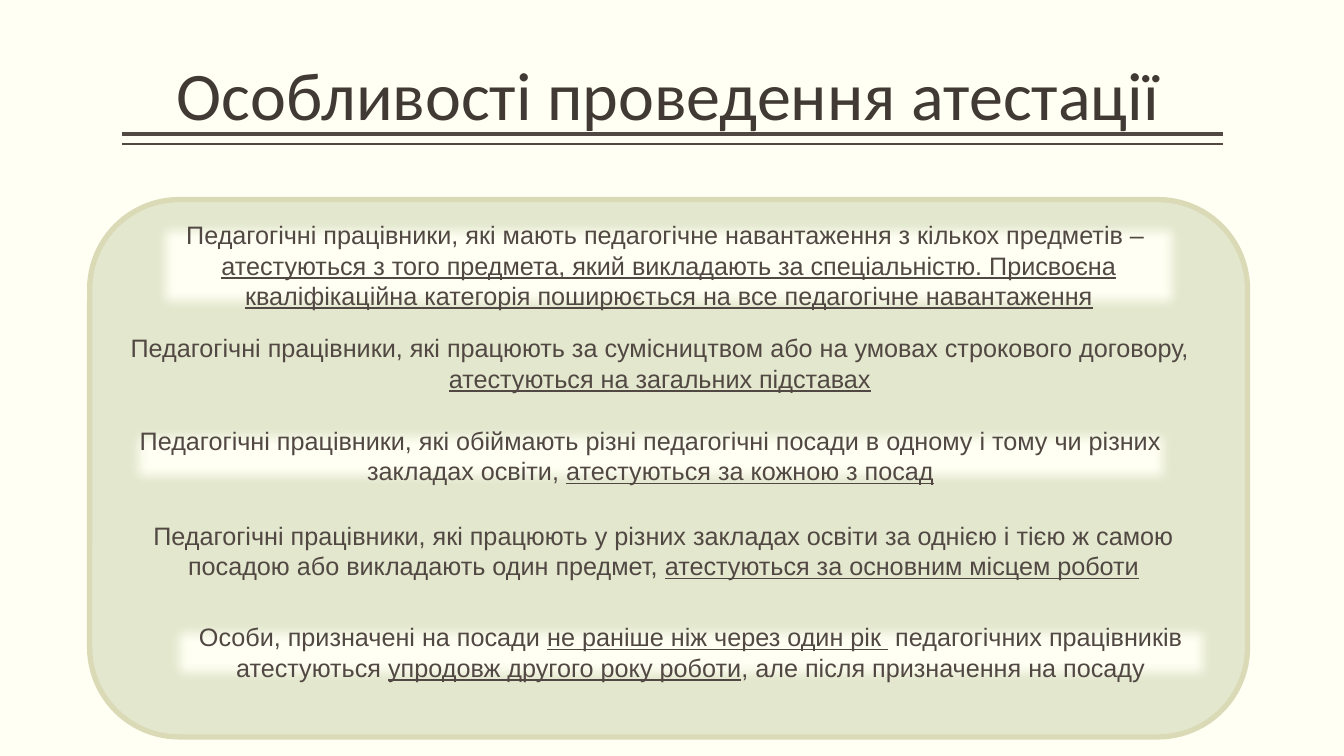
from lxml import etree
from pptx import Presentation
from pptx.dml.color import RGBColor
from pptx.enum import shapes, text
from pptx.oxml.ns import qn
from pptx.util import Cm, Pt

HUES = {"page": "FFFFF3", "title": "413933", "body": "514843",
        "panel": "E3E7CD", "edge": "DADAB6"}
TITLE = "Особливості проведення атестації"

# Each rule: box in cm, highlighted or not, paragraphs.
# Within a paragraph, every second piece is underlined.
RULES = [
    ((3.78, 5.41, 26.16, 2.57), True, [
        ["Педагогічні працівники, які мають педагогічне навантаження "
         "з кількох предметів – "],
        ["", "атестуються з того предмета, який викладають за спеціальністю. "
         "Присвоєна кваліфікаційна категорія поширюється на все педагогічне "
         "навантаження"]]),
    ((2.9, 8.26, 27.46, 1.8), False, [
        ["Педагогічні працівники, які працюють за сумісництвом або на умовах "
         "строкового договору, ", "атестуються на загальних підставах"]]),
    ((3.1, 10.59, 26.59, 1.8), True, [
        ["Педагогічні працівники, які обіймають різні педагогічні посади "
         "в одному і тому чи різних закладах освіти, ",
         "атестуються за кожною з посад"]]),
    ((3.1, 12.98, 27.25, 1.8), False, [
        ["Педагогічні працівники, які працюють у різних закладах освіти "
         "за однією і тією ж самою посадою або викладають один предмет, ",
         "атестуються за основним місцем роботи"]]),
    ((4.11, 15.54, 26.59, 1.8), True, [
        ["Особи, призначені на посади ", "не раніше ніж через один рік ",
         " педагогічних працівників атестуються ",
         "упродовж другого року роботи",
         ", але після призначення на посаду"]]),
]


def tint(name):
    return RGBColor.from_string(HUES[name])


def assign(item, form):
    for key, value in form.items():
        setattr(item, key, value)


def write(frame, paras, font, hue, form, space=1.0):
    """Fill a text frame with centred paragraphs, underlining odd pieces."""
    assign(frame, form)
    for row, parts in enumerate(paras):
        para = frame.paragraphs[0] if row == 0 else frame.add_paragraph()
        assign(para, {"alignment": text.PP_ALIGN.CENTER, "line_spacing": space})
        for index, part in enumerate(parts):
            if part:
                run = para.add_run()
                run.text = part
                assign(run.font, {**font, "underline": index % 2 == 1})
                run.font.color.rgb = tint(hue)


def add_block(slide, kind, box, fill):
    block = slide.shapes.add_shape(kind, *map(Cm, box))
    block.shadow.inherit = False
    block.fill.solid()
    block.fill.fore_color.rgb = tint(fill)
    block.line.fill.background()
    return block


def add_panel(slide):
    panel = add_block(slide, shapes.MSO_SHAPE.ROUNDED_RECTANGLE,
                      (2.26, 5.03, 29.18, 13.54), "panel")
    panel.line.color.rgb = tint("edge")
    panel.line.width = Pt(3.78)


def soften(block):
    """Blur the edges of a shape."""
    effects = block._element.spPr.find(qn("a:effectLst"))
    etree.SubElement(effects, qn("a:softEdge"), rad=str(Pt(10)))


def add_line(slide, top, width):
    line = slide.shapes.add_connector(
        shapes.MSO_CONNECTOR.STRAIGHT, Cm(30.81), Cm(top), Cm(3.07), Cm(top))
    line.line.color.rgb = tint("body")
    line.line.width = Pt(width)
    etree.SubElement(line._element.spPr, qn("a:effectLst"))


def add_title(slide):
    box = slide.shapes.add_textbox(*map(Cm, (2.13, 0.89, 29.41, 2.64)))
    write(box.text_frame, [[TITLE]], {"name": "Calibri", "size": Pt(48.6)},
          "title", {"word_wrap": True, "margin_left": 0, "margin_right": 0,
                    "vertical_anchor": text.MSO_ANCHOR.BOTTOM}, 0.9)


def add_rule(slide, box, marked, paras):
    if marked:
        block = add_block(slide, shapes.MSO_SHAPE.RECTANGLE, box, "page")
        soften(block)
    else:
        block = slide.shapes.add_textbox(*map(Cm, box))
    write(block.text_frame, paras, {"name": "Arial", "size": Pt(18)}, "body",
          {"word_wrap": True, "vertical_anchor": text.MSO_ANCHOR.TOP,
           "auto_size": text.MSO_AUTO_SIZE.SHAPE_TO_FIT_TEXT})


def main():
    deck = Presentation()
    assign(deck, {"slide_width": Cm(33.87), "slide_height": Cm(19.05)})
    slide = deck.slides.add_slide(deck.slide_layouts[6])
    slide.background.fill.solid()
    slide.background.fill.fore_color.rgb = tint("page")
    for top, width in ((3.38, 3), (3.63, 1)):
        add_line(slide, top, width)
    add_title(slide)
    add_panel(slide)
    for rule in RULES:
        add_rule(slide, *rule)
    deck.save("out.pptx")


if __name__ == "__main__":
    main()
